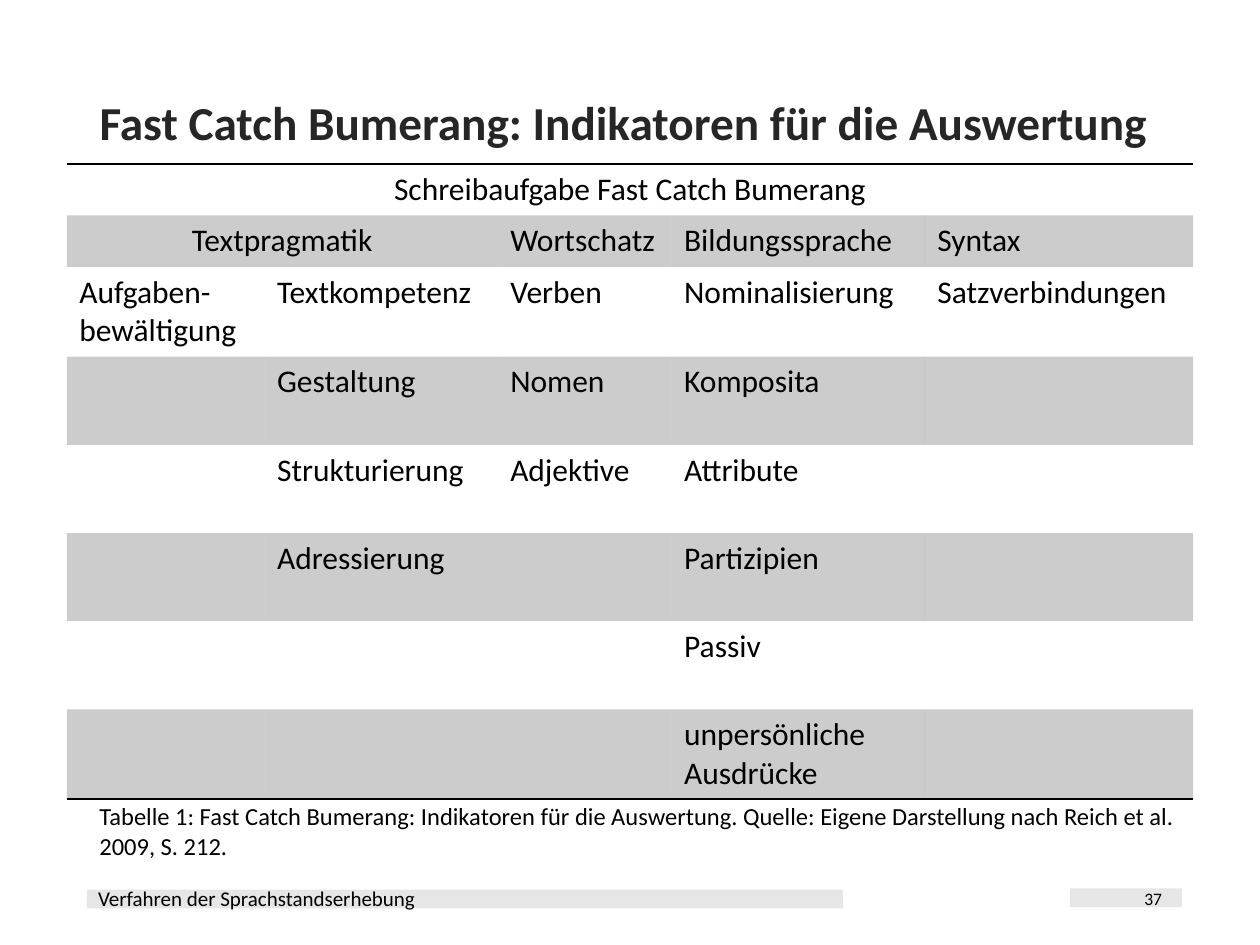
from dataclasses import dataclass

from lxml.etree import SubElement
from pptx import Presentation
from pptx.dml.color import RGBColor as Color
from pptx.enum.shapes import MSO_SHAPE as Preset
from pptx.enum.text import MSO_ANCHOR as Anchor, MSO_AUTO_SIZE as AutoSize, PP_ALIGN as Align
from pptx.oxml import parse_xml
from pptx.oxml.ns import nsdecls, qn
from pptx.util import Inches, Pt


@dataclass(frozen=True)
class Theme:
    """Colours, font and type sizes of the slide."""
    font: str = "Calibri"
    ink: str = "000000"
    title_ink: str = "262626"
    bar: str = "E7E6E6"
    band_opacity: int = 20
    title_size: int = 27
    table_size: int = 18
    caption_size: int = 14
    footer_size: int = 12
    number_size: int = 10


NO_GRID_STYLE = "{2D5ABB26-0587-4C30-8999-92F81FD0307C}"
COLUMN_WIDTHS = [1.57, 1.85, 1.38, 2.01, 2.13]
ROW_HEIGHTS = [0.41] * 2 + [0.7] * 6
INDICATORS = [
    ["Schreibaufgabe Fast Catch Bumerang", "", "", "", ""],
    ["Textpragmatik", "", "Wortschatz", "Bildungssprache", "Syntax"],
    ["Aufgaben-bewältigung", "Textkompetenz", "Verben", "Nominalisierung", "Satzverbindungen"],
    ["", "Gestaltung", "Nomen", "Komposita", ""],
    ["", "Strukturierung", "Adjektive", "Attribute", ""],
    ["", "Adressierung", "", "Partizipien", ""],
    ["", "", "", "Passiv", ""],
    ["", "", "", "unpersönliche\nAusdrücke", ""],
]
MERGED_COLUMNS = {0: 5, 1: 2}


class SlideBuilder:
    """Holds the theme and the current slide."""

    def __init__(self, slide, theme):
        self.slide = slide
        self.theme = theme

    def set_text(self, frame, text, size, color=None, bold=False, align=Align.LEFT, spacing=1.0):
        """Fill a text frame with evenly formatted paragraphs."""
        frame.text = text
        font_format = {"name": self.theme.font, "size": Pt(size), "bold": bold}
        for paragraph in frame.paragraphs:
            paragraph.alignment = align
            paragraph.line_spacing = spacing
            for name, value in font_format.items():
                setattr(paragraph.font, name, value)
            paragraph.font.color.rgb = Color.from_string(color or self.theme.ink)

    def bar(self, left, top, width, height):
        """Add a plain footer bar."""
        shape = self.slide.shapes.add_shape(Preset.RECTANGLE, *map(Inches, (left, top, width, height)))
        shape.shadow.inherit = False
        shape.fill.solid()
        shape.fill.fore_color.rgb = Color.from_string(self.theme.bar)
        shape.line.fill.background()

    def title(self, text, left, top, width, height):
        """Place and format the title placeholder."""
        shape = self.slide.shapes.title
        places = {"left": left, "top": top, "width": width, "height": height}
        for name, value in places.items():
            setattr(shape, name, Inches(value))
        frame = shape.text_frame
        frame.auto_size = AutoSize.NONE
        frame.vertical_anchor = Anchor.MIDDLE
        self.set_text(frame, text, self.theme.title_size, self.theme.title_ink, bold=True, spacing=0.9)

    def text(self, text, size, left, top, width, height, anchor=Anchor.MIDDLE, align=Align.LEFT):
        """Add a wrapped text box."""
        box = self.slide.shapes.add_textbox(*map(Inches, (left, top, width, height)))
        frame_format = {"word_wrap": True, "auto_size": AutoSize.NONE, "vertical_anchor": anchor}
        for name, value in frame_format.items():
            setattr(box.text_frame, name, value)
        self.set_text(box.text_frame, text, size, align=align)

    def fill_band(self, cell):
        """Give a cell a translucent fill."""
        cell.fill.solid()
        cell.fill.fore_color.rgb = Color.from_string(self.theme.ink)
        color = cell._tc.tcPr.find(".//" + qn("a:srgbClr"))
        SubElement(color, qn("a:alpha"), val=str(self.theme.band_opacity * 1000))

    def rule(self, cell, side):
        """Draw a one-point border on one side of a cell."""
        cell._tc.get_or_add_tcPr().insert(0, parse_xml(
            f'<a:{side} {nsdecls("a")} w="{Pt(1)}"><a:solidFill>'
            f'<a:srgbClr val="{self.theme.ink}"/></a:solidFill></a:{side}>'))

    def table(self, rows, widths, heights, merged, left, top):
        """Add a banded table with a rule above and below."""
        size = map(Inches, (left, top, sum(widths), sum(heights)))
        table = self.slide.shapes.add_table(len(rows), len(widths), *size).table
        table.first_row = table.horz_banding = False
        table._tbl.tblPr.find(qn("a:tableStyleId")).text = NO_GRID_STYLE
        for column, width in zip(table.columns, widths):
            column.width = Inches(width)
        for row, height in zip(table.rows, heights):
            row.height = Inches(height)
        for row_index, texts in enumerate(rows):
            for column_index, text in enumerate(texts):
                cell = table.cell(row_index, column_index)
                centred = column_index == 0 and row_index in merged
                self.set_text(cell.text_frame, text, self.theme.table_size,
                              align=Align.CENTER if centred else Align.LEFT)
                if row_index % 2:
                    self.fill_band(cell)
                else:
                    cell.fill.background()
                if row_index == 0:
                    self.rule(cell, "lnT")
                if row_index == len(rows) - 1:
                    self.rule(cell, "lnB")
        for row_index, span in merged.items():
            table.cell(row_index, 0).merge(table.cell(row_index, span - 1))


def main():
    """Build and save the slide."""
    presentation = Presentation()
    presentation.slide_width, presentation.slide_height = Inches(10), Inches(7.5)
    theme = Theme()
    builder = SlideBuilder(presentation.slides.add_slide(presentation.slide_layouts[5]), theme)
    builder.bar(0.69, 7.06, 6, 0.15)
    builder.bar(8.49, 7.05, 0.89, 0.15)
    builder.title("Fast Catch Bumerang: Indikatoren für die Auswertung", 0.69, 0.58, 8.62, 0.82)
    builder.text("Verfahren der Sprachstandserhebung", theme.footer_size, 0.68, 7.05, 6.01, 0.16)
    builder.text("37", theme.number_size, 8.53, 6.93, 0.79, 0.4, align=Align.RIGHT)
    builder.table(INDICATORS, COLUMN_WIDTHS, ROW_HEIGHTS, MERGED_COLUMNS, 0.53, 1.3)
    builder.text("Tabelle 1: Fast Catch Bumerang: Indikatoren für die Auswertung. "
                 "Quelle: Eigene Darstellung nach Reich et al. 2009, S. 212.",
                 theme.caption_size, 0.69, 6.31, 8.78, 0.57, anchor=Anchor.TOP)
    presentation.save("out.pptx")


if __name__ == "__main__":
    main()
